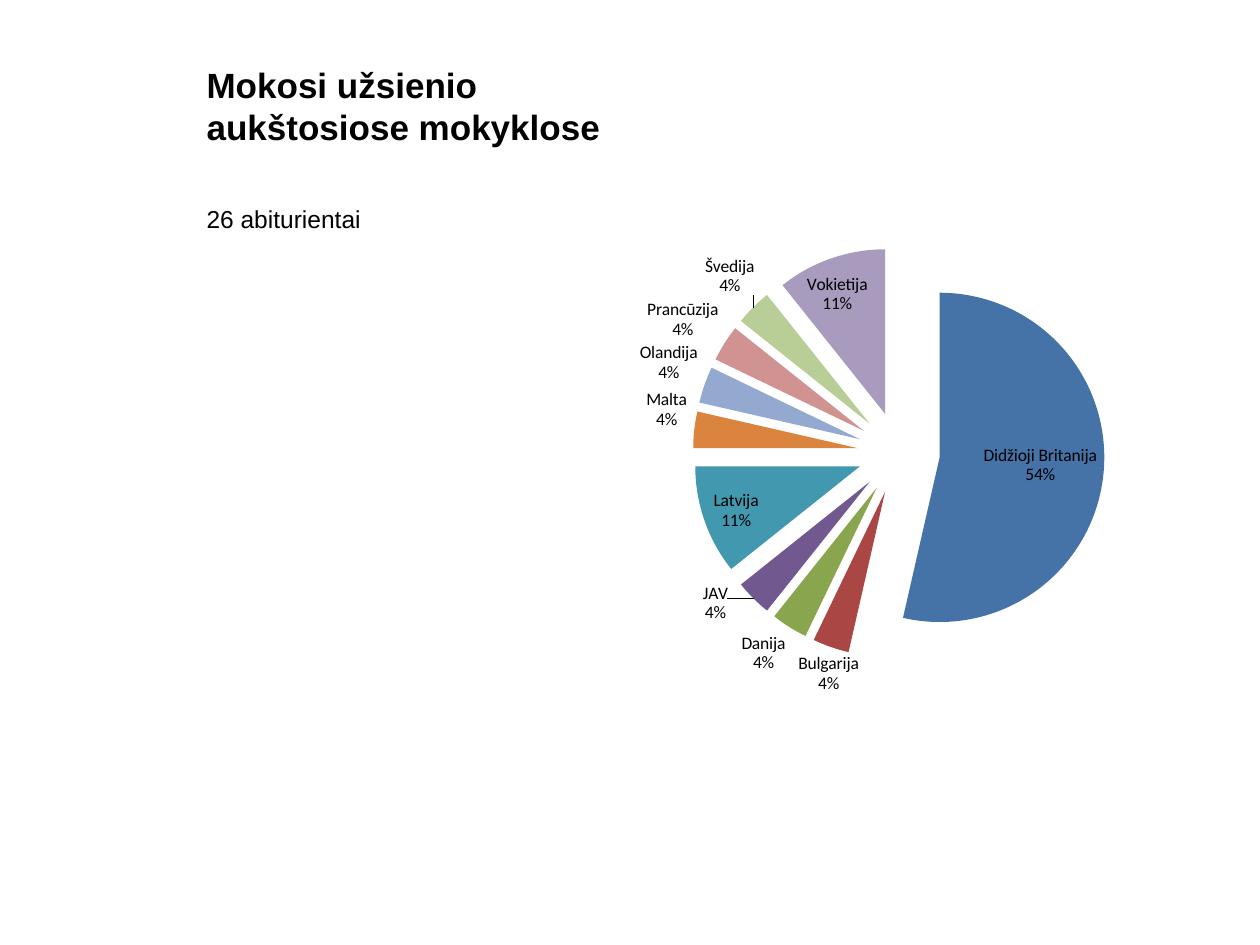
from lxml import etree
from pptx import Presentation
from pptx import util as u
from pptx.chart.data import CategoryChartData
from pptx.dml.color import RGBColor
from pptx.enum import chart as ch, text
from pptx.oxml import ns

# Content
TITLE = "Mokosi užsienio aukštosiose mokyklose"
BODY = "26 abiturientai"
COUNTRIES = [  # name, share in 28ths, colour
    ("Didžioji Britanija", 15, "4572A7"),
    ("Bulgarija", 1, "AA4643"),
    ("Danija", 1, "89A54E"),
    ("JAV", 1, "71588F"),
    ("Latvija", 3, "4198AF"),
    ("Malta", 1, "DB843D"),
    ("Olandija", 1, "93A9CF"),
    ("Prancūzija", 1, "D19392"),
    ("Švedija", 1, "B9CD96"),
    ("Vokietija", 3, "A99BBD"),
]

# Theme and layout
THEME = dict(font="Arial", chart_font="Calibri", ink="000000",
             title=20, body=14, label=10)
LEFT, COLUMN = 3.91, 9.2
TITLE_BOX = (LEFT, 0.76, COLUMN, 3.15)
BODY_BOX = (LEFT, 3.99, COLUMN, 12.75)
CHART_BOX = (10.97, 3.81, 13.0, 10.64)
PLOT = dict(x=0.23, y=0.11, w=0.64, h=0.78)  # fractions of the chart
EXPLOSION = 25


def style(font, name, size, bold=False):
    font.name, font.size, font.bold = name, u.Pt(size), bold
    font.color.rgb = RGBColor.from_string(THEME["ink"])


def put_text(sp, words, *, box, size, bold=False, anchor=text.MSO_ANCHOR.TOP, bottom=0.13):
    sp.left, sp.top, sp.width, sp.height = map(u.Cm, box)
    tf = sp.text_frame
    tf.word_wrap, tf.auto_size = True, text.MSO_AUTO_SIZE.NONE
    tf.vertical_anchor, tf.margin_bottom = anchor, u.Cm(bottom)
    p = tf.paragraphs[0]
    p.alignment, p.space_before = text.PP_ALIGN.LEFT, u.Pt(0)
    r = p.add_run()
    r.text = words
    style(r.font, THEME["font"], size, bold)


def c_element(tag, val=None):
    el = etree.Element(ns.qn("c:" + tag))
    if val is not None:
        el.set("val", str(val))
    return el


def add_pie(slide):
    data = CategoryChartData()
    data.categories = [name for name, _, _ in COUNTRIES]
    data.add_series("Series 1", [share for _, share, _ in COUNTRIES])
    chart = slide.shapes.add_chart(
        ch.XL_CHART_TYPE.PIE, *map(u.Cm, CHART_BOX), data).chart
    chart.has_title = chart.has_legend = False
    style(chart.font, THEME["chart_font"], THEME["label"])

    # Separated, coloured slices
    plot = chart.plots[0]
    plot.vary_by_categories = True
    series = plot.series[0]
    series._element.find(ns.qn("c:tx")).addnext(c_element("explosion", EXPLOSION))
    for i, (_, _, colour) in enumerate(COUNTRIES):
        fill = series.points[i].format.fill
        fill.solid()
        fill.fore_color.rgb = RGBColor.from_string(colour)

    # Country and percentage on two lines
    labels = series.data_labels
    labels.show_category_name = labels.show_percentage = True
    labels.show_value = False
    labels.position = ch.XL_LABEL_POSITION.BEST_FIT
    style(labels.font, THEME["chart_font"], THEME["label"])
    separator = c_element("separator")
    separator.text = "\n"
    labels._element.find(ns.qn("c:showBubbleSize")).addnext(separator)

    # Fixed plot area
    area = chart._chartSpace.chart.plotArea
    for old in area.findall(ns.qn("c:layout")):
        area.remove(old)
    layout = c_element("layout")
    manual = c_element("manualLayout")
    manual.append(c_element("layoutTarget", "inner"))
    for side in "xy":
        manual.append(c_element(side + "Mode", "edge"))
    for side, value in PLOT.items():
        manual.append(c_element(side, value))
    layout.append(manual)
    area.insert(0, layout)


def main():
    prs = Presentation()
    prs.slide_width, prs.slide_height = u.Cm(25.4), u.Cm(19.05)
    slide = prs.slides.add_slide(prs.slide_layouts[7])
    unused = slide.placeholders[1]._element
    unused.getparent().remove(unused)

    put_text(slide.shapes.title, TITLE, box=TITLE_BOX, size=THEME["title"],
             bold=True, anchor=text.MSO_ANCHOR.BOTTOM, bottom=0.94)
    add_pie(slide)
    put_text(slide.placeholders[2], BODY, box=BODY_BOX, size=THEME["body"])
    prs.save("out.pptx")


if __name__ == "__main__":
    main()
